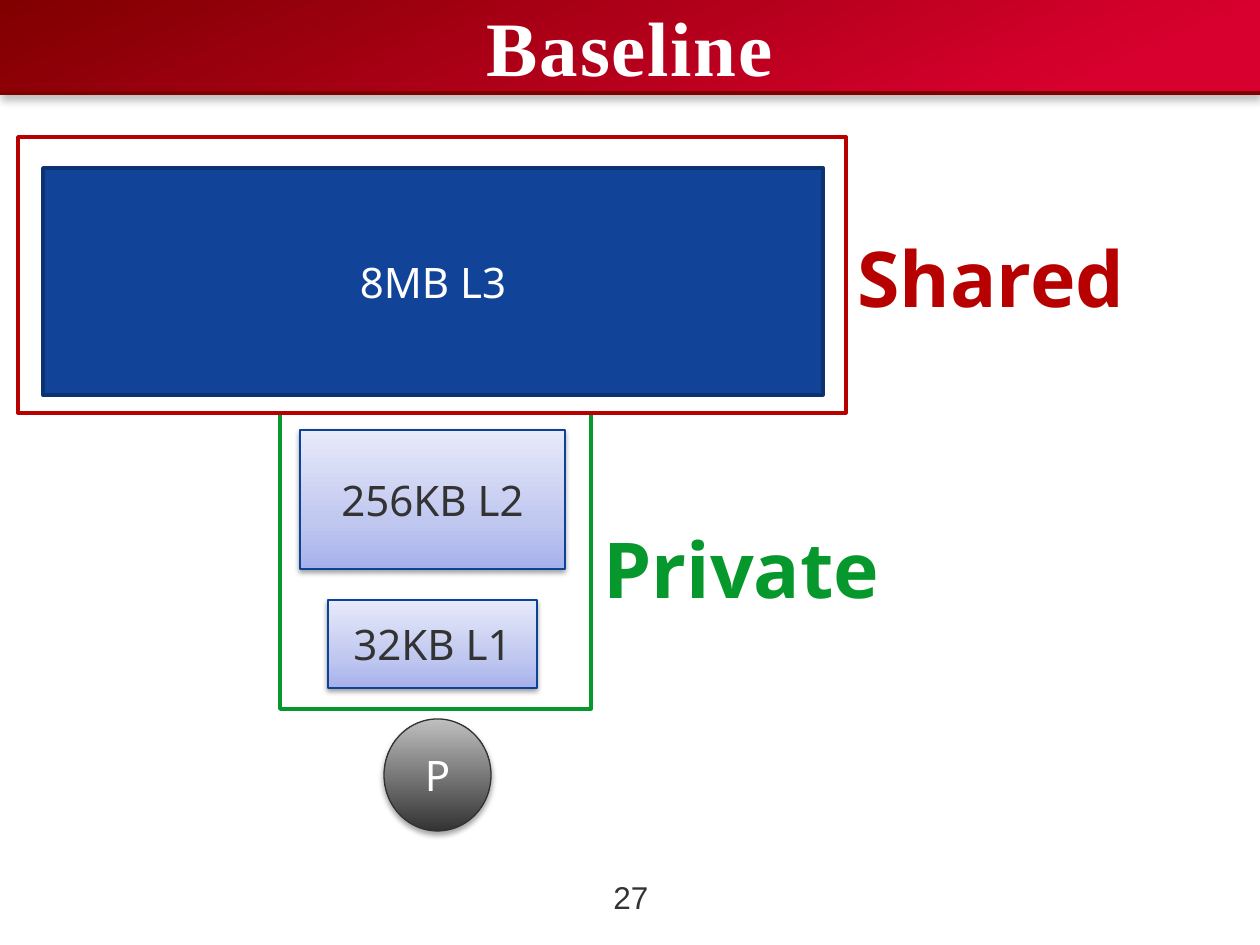
"""Build a slide showing the baseline cache hierarchy."""
from dataclasses import dataclass
from typing import Optional

from lxml import etree
from pptx import Presentation
from pptx import util as u
from pptx.dml import color
from pptx.enum import shapes, text
from pptx.oxml import ns

SCALE = 914400 / 126
COLORS = {
    "white": "FFFFFF", "ink": "333333", "maroon": "800000", "crimson": "D8002E",
    "blue": "114499", "navy": "0D3271", "edge": "0D4299", "rim": "323232",
    "lilac": "A6B1EB", "mist": "C1C8F0", "pale": "E7EAFA", "silver": "BFBFBF",
    "shared": "B70101", "private": "06982C",
}


@dataclass(frozen=True)
class Gradient:
    stops: tuple[tuple[int, str], ...]
    angle: int = 270


@dataclass(frozen=True)
class Shadow:
    alpha: int
    blur: float
    dist: float


@dataclass(frozen=True)
class Label:
    text: str
    color: str
    size: int = 24
    font: str = "Noto Sans"
    bold: bool = False
    spacing: int = 0


@dataclass(frozen=True)
class Block:
    box: tuple[int, int, int, int]
    fill: Optional[str | Gradient] = None
    line: Optional[str] = None
    width: float = 2
    label: Optional[Label] = None
    shadow: Optional[Shadow] = None
    kind: shapes.MSO_SHAPE = shapes.MSO_SHAPE.RECTANGLE


@dataclass(frozen=True)
class Caption:
    box: tuple[int, int, int, int]
    label: Label
    centered: bool = True
    wrap: bool = True
    top: float = 0.05


BANNER = Gradient(((0, "maroon"), (87, "crimson")), 66)
CACHE = Gradient(((0, "lilac"), (35, "mist"), (100, "pale")))
CORE = Gradient(((0, "ink"), (100, "silver")))
SOFT = Shadow(38, 3.1, 1.6)

BLOCKS = (
    Block((43, 168, 780, 227), "blue", "navy", label=Label("8MB L3", "white")),
    Block((300, 430, 265, 139), CACHE, "edge", 0.75, Label("256KB L2", "ink"), SOFT),
    Block((328, 600, 209, 88), CACHE, "edge", 0.75, Label("32KB L1", "ink"), SOFT),
    Block((384, 719, 107, 112), CORE, "rim", 0.75, Label("P", "white"),
          Shadow(35, 3.1, 1.8), shapes.MSO_SHAPE.OVAL),
    Block((280, 413, 311, 296), line="private"),
    Block((18, 137, 828, 276), line="shared"),
)
CAPTIONS = (
    Caption((581, 872, 100, 50), Label("27", "ink", 18, "Arial")),
    Caption((0, 0, 1260, 92),
            Label("Baseline", "white", 44, "Times New Roman", True, 100), top=0),
    Caption((591, 515, 302, 106), Label("Private", "private", 44, bold=True), False, False),
    Caption((845, 224, 299, 106), Label("Shared", "shared", 44, bold=True), False, False),
)


def px(n: int) -> u.Emu:
    return u.Emu(round(n * SCALE))


def rgb(name: str) -> color.RGBColor:
    return color.RGBColor.from_string(COLORS[name])


def add_label(tf, label: Label, centered: bool) -> None:
    p = tf.paragraphs[0]
    p.alignment = text.PP_ALIGN.CENTER if centered else text.PP_ALIGN.LEFT
    r = p.add_run()
    r.text = label.text
    r.font.name = label.font
    r.font.size = u.Pt(label.size)
    r.font.bold = label.bold
    r.font.color.rgb = rgb(label.color)
    if label.spacing:
        r.font._element.set("spc", str(label.spacing))


def add_color(parent, name: str):
    return etree.SubElement(parent, ns.qn("a:srgbClr"), val=COLORS[name])


def set_gradient(sp, gradient: Gradient) -> None:
    sp.fill.gradient()
    sp.fill.gradient_angle = 360 - gradient.angle
    stops = sp._element.spPr.find(".//" + ns.qn("a:gsLst"))
    for stop in list(stops):
        stops.remove(stop)
    for pos, name in gradient.stops:
        add_color(etree.SubElement(stops, ns.qn("a:gs"), pos=str(pos * 1000)), name)


def set_shadow(sp, shadow: Shadow) -> None:
    effects = sp._element.spPr.find(ns.qn("a:effectLst"))
    outer = etree.SubElement(
        effects, ns.qn("a:outerShdw"), blurRad=str(u.Pt(shadow.blur)),
        dist=str(u.Pt(shadow.dist)), dir="5400000", rotWithShape="0")
    black = etree.SubElement(outer, ns.qn("a:srgbClr"), val="000000")
    etree.SubElement(black, ns.qn("a:alpha"), val=str(shadow.alpha * 1000))


def add_block(s, block: Block) -> None:
    sp = s.shapes.add_shape(block.kind, *map(px, block.box))
    sp.shadow.inherit = False
    if isinstance(block.fill, Gradient):
        set_gradient(sp, block.fill)
    elif block.fill:
        sp.fill.solid()
        sp.fill.fore_color.rgb = rgb(block.fill)
    else:
        sp.fill.background()
    if block.line:
        sp.line.color.rgb = rgb(block.line)
        sp.line.width = u.Pt(block.width)
    else:
        sp.line.fill.background()
    if block.shadow:
        set_shadow(sp, block.shadow)
    if block.label:
        sp.text_frame.vertical_anchor = text.MSO_ANCHOR.MIDDLE
        add_label(sp.text_frame, block.label, True)


def add_caption(s, caption: Caption) -> None:
    tf = s.shapes.add_textbox(*map(px, caption.box)).text_frame
    tf.word_wrap = caption.wrap
    tf.margin_top = u.Inches(caption.top)
    add_label(tf, caption.label, caption.centered)


def add_rule(s, y: int, width: int) -> None:
    sp = s.shapes.add_connector(shapes.MSO_CONNECTOR.STRAIGHT, 0, px(y), px(width), px(y))
    sp.line.color.rgb = rgb("maroon")
    sp.line.width = u.Pt(2)
    etree.SubElement(sp._element.spPr, ns.qn("a:effectLst"))


def main() -> None:
    prs = Presentation()
    prs.slide_width, prs.slide_height = px(1260), px(945)
    s = prs.slides.add_slide(prs.slide_layouts[6])
    add_block(s, Block((0, 0, 1261, 93), BANNER, shadow=Shadow(25, 5, 3.8)))
    add_rule(s, 93, 1261)
    for block in BLOCKS:
        add_block(s, block)
    for caption in CAPTIONS:
        add_caption(s, caption)
    prs.save("out.pptx")


if __name__ == "__main__":
    main()
